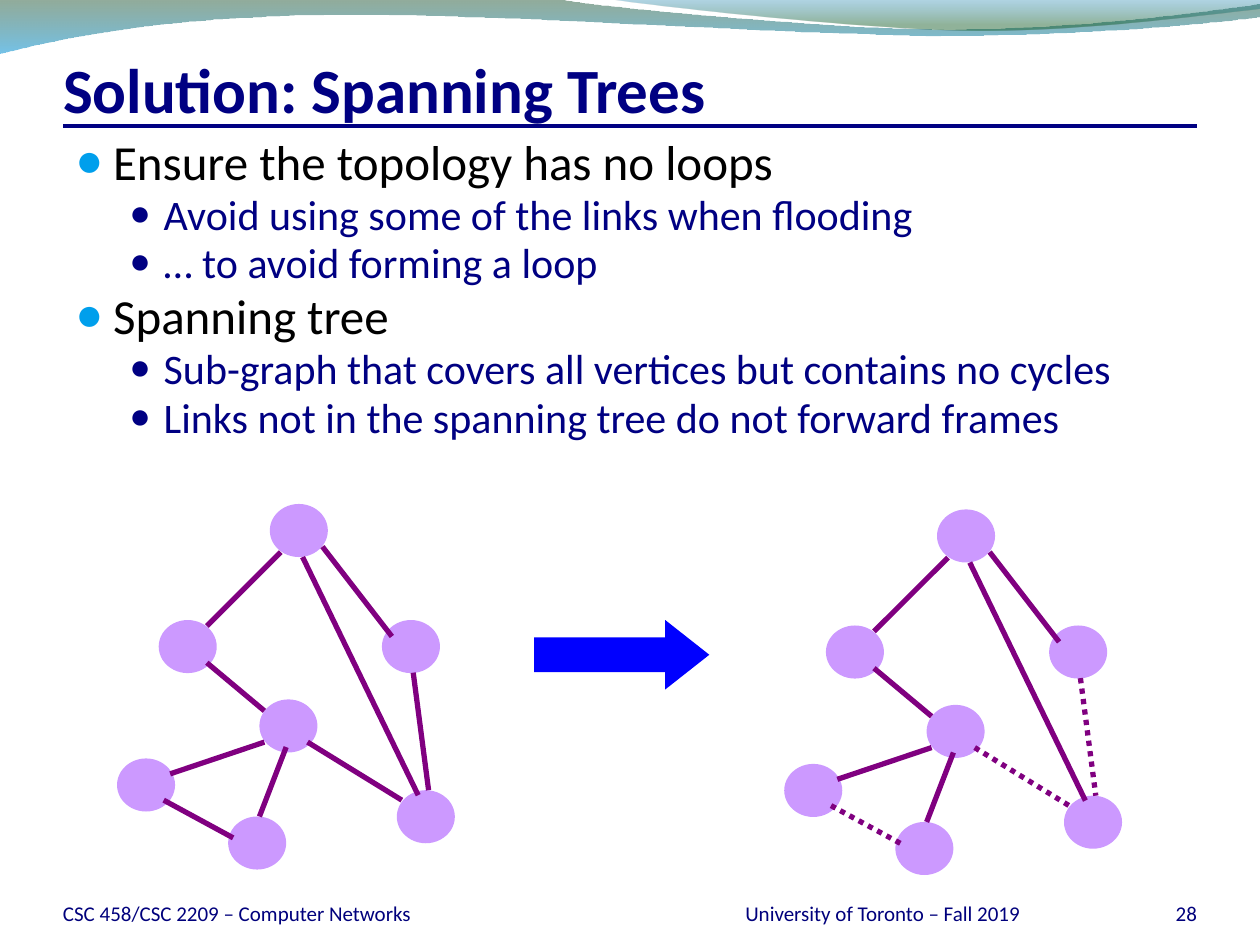
"""Build a slide on spanning trees: a list above a network graph and its loop-free version."""
from dataclasses import dataclass
from typing import NamedTuple

from lxml import etree
from pptx import Presentation
from pptx.dml.color import RGBColor
from pptx.enum import dml, shapes, text
from pptx.oxml.ns import qn
from pptx.util import Cm, Pt


@dataclass(frozen=True)
class Theme:
    font: str = "Calibri"
    navy: str = "000082"
    footer: str = "00007C"
    black: str = "000000"
    sky: str = "009FEC"
    node: str = "CC99FF"
    link: str = "800080"
    arrow: str = "0000FF"
    title_size: int = 36
    point_size: int = 28
    detail_size: int = 24
    footer_size: int = 12


THEME = Theme()


class Level(NamedTuple):
    size: int
    color: str
    bullet: str
    bullet_pct: int
    margin: float
    hanging: float


class Point(NamedTuple):
    x: float
    y: float


class Link(NamedTuple):
    start: Point
    end: Point
    in_tree: bool = True


class Stop(NamedTuple):
    position: float
    color: str
    opacity: int


class Wave(NamedTuple):
    start: Point
    segments: tuple
    stops: tuple


class Footer(NamedTuple):
    wording: str
    left: float
    width: float
    align: text.PP_ALIGN


LEVELS = (
    Level(THEME.point_size, THEME.black, THEME.sky, 95, 0.76, 0.76),
    Level(THEME.detail_size, THEME.navy, THEME.navy, 85, 1.78, 0.69),
)
POINTS = (
    (0, "Ensure the topology has no loops"),
    (1, "Avoid using some of the links when flooding"),
    (1, "… to avoid forming a loop"),
    (0, "Spanning tree"),
    (1, "Sub-graph that covers all vertices but contains no cycles"),
    (1, "Links not in the spanning tree do not forward frames"),
)
FOOTERS = (
    Footer("CSC 458/CSC 2209 – Computer Networks", 1.27, 12.07, text.PP_ALIGN.LEFT),
    Footer("28", 22.02, 2.11, text.PP_ALIGN.RIGHT),
    Footer("University of Toronto – Fall 2019", 13.77, 8.05, text.PP_ALIGN.CENTER),
)
NODES = (
    Point(5.44, 10.16), Point(3.2, 12.5), Point(7.7, 12.5), Point(5.23, 14.1),
    Point(8, 15.93), Point(2.36, 15.29), Point(4.6, 16.46),
)
LINKS = (
    Link(Point(5.66, 11.13), Point(4.17, 12.62)),
    Link(Point(6.5, 11.02), Point(7.9, 12.83)),
    Link(Point(4.17, 13.36), Point(5.33, 14.33)),
    Link(Point(6.2, 14.96), Point(8.1, 16.13), in_tree=False),
    Link(Point(8.33, 13.56), Point(8.64, 15.93), in_tree=False),
    Link(Point(6.1, 11.23), Point(8.43, 16.03)),
    Link(Point(3.43, 15.6), Point(5.33, 14.96)),
    Link(Point(5.23, 16.46), Point(5.77, 15.06)),
    Link(Point(4.7, 16.89), Point(3.3, 16.13), in_tree=False),
)
WAVES = (
    Wave(Point(0, -0.03), (
        ((11.18, -0.03),),
        ((12.09, 0.15), (16.87, 0.58), (19.25, 0.58)),
        ((21.67, 0.58), (24.33, 0.23), (25.4, 0.08)),
        ((25.43, 0.33),),
        ((24.97, 0.41), (22.1, 0.71), (18.95, 0.71)),
        ((15.8, 0.69), (9.7, 0.25), (6.53, 0.3)),
        ((3.28, 0.33), (1.17, 0.76), (-0.03, 1.07)),
    ), (Stop(0, "0F461E", 45), Stop(1, "0090D6", 55))),
    Wave(Point(12.17, -0.03), (
        ((12.93, 0.1), (17.32, 0.58), (19.53, 0.61)),
        ((21.74, 0.64), (24.41, 0.28), (25.4, 0.18)),
        ((25.4, -0.03),),
    ), (Stop(0, "0076AF", 30), Stop(0.8, "0D5821", 45))),
)


def write(paragraph, wording: str, *, size: int, color: str, bold: bool = False,
          align: text.PP_ALIGN = text.PP_ALIGN.LEFT) -> None:
    paragraph.alignment = align
    run = paragraph.add_run()
    run.text = wording
    run.font.name, run.font.size, run.font.bold = THEME.font, Pt(size), bold
    run.font.color.rgb = RGBColor.from_string(color)


def place(shape, left: float, top: float, width: float, height: float) -> None:
    shape.left, shape.top, shape.width, shape.height = map(Cm, (left, top, width, height))


def set_frame(frame, anchor: text.MSO_ANCHOR, sides: float, ends: float) -> None:
    frame.word_wrap, frame.auto_size = True, text.MSO_AUTO_SIZE.NONE
    frame.vertical_anchor = anchor
    frame.margin_left = frame.margin_right = Cm(sides)
    frame.margin_top = frame.margin_bottom = Cm(ends)


def add_point(paragraph, wording: str, depth: int) -> None:
    level = LEVELS[depth]
    paragraph.level = depth
    paragraph.line_spacing, paragraph.space_before = 0.8, Pt(level.size * 0.2)
    write(paragraph, wording, size=level.size, color=level.color)
    props = paragraph._p.get_or_add_pPr()
    props.set("marL", str(Cm(level.margin)))
    props.set("indent", str(-Cm(level.hanging)))
    tint = etree.SubElement(props, qn("a:buClr"))
    etree.SubElement(tint, qn("a:srgbClr"), val=level.bullet)
    etree.SubElement(props, qn("a:buSzPct"), val=str(level.bullet_pct * 1000))
    etree.SubElement(props, qn("a:buChar"), char="●")


def bend(band, segments: tuple) -> None:
    edges = list(band._element.iter(qn("a:lnTo")))
    for edge, segment in zip(edges, segments):
        if len(segment) == 3:
            curve = etree.Element(qn("a:cubicBezTo"))
            for x, y in segment:
                etree.SubElement(curve, qn("a:pt"), x=str(Cm(x) - band.left),
                                 y=str(Cm(y) - band.top))
            edge.getparent().replace(edge, curve)


def draw_wave(slide, wave: Wave) -> None:
    builder = slide.shapes.build_freeform(*map(Cm, wave.start))
    builder.add_line_segments([tuple(map(Cm, s[-1])) for s in wave.segments], close=True)
    band = builder.convert_to_shape()
    bend(band, wave.segments)
    band.shadow.inherit = False
    band.line.fill.background()
    band.fill.gradient()
    band.fill.gradient_angle = 270
    for target, stop in zip(band.fill.gradient_stops, wave.stops):
        target.position, target.color.rgb = stop.position, RGBColor.from_string(stop.color)
    for color, stop in zip(band._element.spPr.iter(qn("a:srgbClr")), wave.stops):
        etree.SubElement(color, qn("a:alpha"), val=str(stop.opacity * 1000))


def draw_shape(slide, kind: shapes.MSO_SHAPE, box: tuple, color: str):
    shape = slide.shapes.add_shape(kind, *map(Cm, box))
    shape.shadow.inherit = False
    shape.fill.solid()
    shape.fill.fore_color.rgb = RGBColor.from_string(color)
    shape.line.fill.background()
    return shape


def draw_line(slide, start: Point, end: Point, color: str, weight: float,
              dotted: bool = False) -> None:
    line = slide.shapes.add_connector(shapes.MSO_CONNECTOR.STRAIGHT, *map(Cm, (*start, *end)))
    line.line.color.rgb, line.line.width = RGBColor.from_string(color), Pt(weight)
    if dotted:
        line.line.dash_style = dml.MSO_LINE.ROUND_DOT
    etree.SubElement(line._element.spPr, qn("a:effectLst"))


def draw_graph(slide, dx: float, dy: float, tree_only: bool) -> None:
    for x, y in NODES:
        draw_shape(slide, shapes.MSO_SHAPE.OVAL, (x + dx, y + dy, 1.17, 1.07), THEME.node)
    for link in LINKS:
        start, end = (Point(p.x + dx, p.y + dy) for p in (link.start, link.end))
        draw_line(slide, start, end, THEME.link, 3, dotted=tree_only and not link.in_tree)


def main() -> None:
    deck = Presentation()
    deck.slide_width, deck.slide_height = Cm(25.4), Cm(19.05)
    slide = deck.slides.add_slide(deck.slide_layouts[1])
    for wave in WAVES:
        draw_wave(slide, wave)
    draw_line(slide, Point(1.27, 2.54), Point(24.13, 2.54), THEME.navy, 2.25)

    title, body = slide.placeholders
    place(title, 1.27, 0.84, 22.86, 1.7)
    set_frame(title.text_frame, text.MSO_ANCHOR.BOTTOM, 0, 0)
    title.text_frame.margin_top = Cm(0.13)
    write(title.text_frame.paragraphs[0], "Solution: Spanning Trees",
          size=THEME.title_size, color=THEME.navy, bold=True)

    place(body, 1.27, 2.74, 22.86, 14.81)
    set_frame(body.text_frame, text.MSO_ANCHOR.TOP, 0.25, 0.13)
    for index, (depth, wording) in enumerate(POINTS):
        frame = body.text_frame
        add_point(frame.add_paragraph() if index else frame.paragraphs[0], wording, depth)

    for footer in FOOTERS:
        box = slide.shapes.add_textbox(*map(Cm, (footer.left, 17.65, footer.width, 1.02)))
        set_frame(box.text_frame, text.MSO_ANCHOR.BOTTOM, 0, 0)
        write(box.text_frame.paragraphs[0], footer.wording, size=THEME.footer_size,
              color=THEME.footer, align=footer.align)

    draw_graph(slide, 0, 0, tree_only=False)
    arrow = draw_shape(slide, shapes.MSO_SHAPE.RIGHT_ARROW, (10.77, 12.5, 3.53, 1.4), THEME.arrow)
    arrow.adjustments[1] = 0.635
    draw_graph(slide, 13.45, 0.11, tree_only=True)
    deck.save("out.pptx")


if __name__ == "__main__":
    main()
